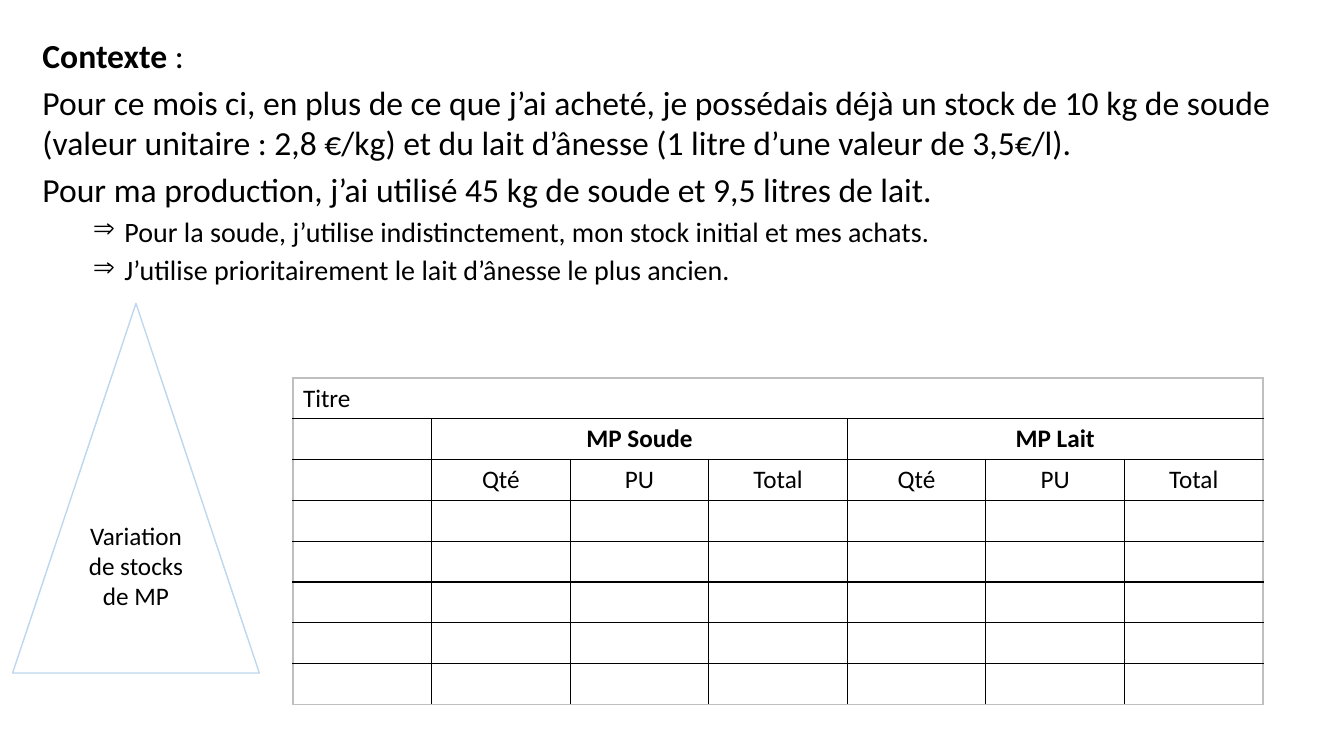
from lxml import etree
from pptx import Presentation
from pptx import util as u
from pptx.dml.color import RGBColor
from pptx.enum import shapes, text
from pptx.oxml.ns import qn

PX = 9525
FONT = "Calibri"
BLACK, WHITE, GREY, SKY = "000000", "FFFFFF", "BFBFBF", "BDD7EE"

CONTEXT = [
    (0, [("Contexte ", True), (":", False)]),
    (0, [("Pour ce mois ci, en plus de ce que j’ai acheté, je possédais déjà un stock "
          "de 10 kg de soude (valeur unitaire : 2,8 €/kg) et du lait d’ânesse "
          "(1 litre d’une valeur de 3,5€/l).", False)]),
    (0, [("Pour ma production, j’ai utilisé 45 kg de soude et 9,5 litres de lait.", False)]),
    (1, [("Pour la soude, j’utilise indistinctement, mon stock initial et mes achats.", False)]),
    (1, [("J’utilise prioritairement le lait d’ânesse le plus ancien.", False)]),
]
MATERIALS = ["MP Soude", "MP Lait"]
MEASURES = ["Qté", "PU", "Total"]
ROWS = 8
COLUMNS = 1 + len(MATERIALS) * len(MEASURES)


def px(length):
    return u.Emu(length * PX)


def color(value):
    return RGBColor.from_string(value)


def add_run(paragraph, words, size, bold=False):
    run = paragraph.add_run()
    run.text = words
    run.font.name = FONT
    run.font.size = u.Pt(size)
    run.font.bold = bold
    run.font.color.rgb = color(BLACK)


def add_arrow_bullet(paragraph):
    properties = paragraph._p.get_or_add_pPr()
    properties.set("marL", str(px(78)))
    properties.set("indent", str(px(-30)))
    etree.SubElement(properties, qn("a:buFont"), typeface="Symbol")
    etree.SubElement(properties, qn("a:buChar"), char="⇒")


def add_context(slide, left, top, width, height):
    frame = slide.shapes.add_textbox(px(left), px(top), px(width), px(height)).text_frame
    frame.word_wrap = True
    for index, (level, runs) in enumerate(CONTEXT):
        paragraph = frame.paragraphs[0] if index == 0 else frame.add_paragraph()
        paragraph.level = level
        if index:
            paragraph.space_before = u.Pt(3.5 if level else 4.5)
        if level:
            add_arrow_bullet(paragraph)
        for words, bold in runs:
            add_run(paragraph, words, 20 if level else 24, bold)


def set_borders(cell, edges):
    properties = cell._tc.get_or_add_tcPr()
    for index, (side, outer) in enumerate(edges):
        line = etree.Element(qn(f"a:{side}"), w=str(u.Pt(1)))
        fill = etree.SubElement(line, qn("a:solidFill"))
        etree.SubElement(fill, qn("a:srgbClr"), val=GREY if outer else BLACK)
        properties.insert(index, line)


def fill_cell(cell, words, bold=False, align=text.PP_ALIGN.CENTER):
    paragraph = cell.text_frame.paragraphs[0]
    paragraph.alignment = align
    add_run(paragraph, words, 18, bold)


def add_stock_table(slide, left, top, width, height):
    stock = slide.shapes.add_table(ROWS, COLUMNS, px(left), px(top), px(width), px(height)).table
    stock.first_row = stock.horz_banding = False

    stock.cell(0, 0).merge(stock.cell(0, COLUMNS - 1))
    fill_cell(stock.cell(0, 0), "Titre", align=text.PP_ALIGN.LEFT)
    for group, material in enumerate(MATERIALS):
        first = 1 + group * len(MEASURES)
        stock.cell(1, first).merge(stock.cell(1, first + len(MEASURES) - 1))
        fill_cell(stock.cell(1, first), material, bold=True)
        for offset, measure in enumerate(MEASURES):
            fill_cell(stock.cell(2, first + offset), measure)

    for row in range(ROWS):
        for column in range(COLUMNS):
            cell = stock.cell(row, column)
            last = column + (cell.span_width if cell.is_merge_origin else 1)
            cell.fill.solid()
            cell.fill.fore_color.rgb = color(WHITE)
            set_borders(cell, [("lnL", column == 0), ("lnR", last == COLUMNS),
                               ("lnT", row == 0), ("lnB", row == ROWS - 1)])


def add_variation(slide, left, top, width, height):
    triangle = slide.shapes.add_shape(
        shapes.MSO_SHAPE.ISOSCELES_TRIANGLE, px(left), px(top), px(width), px(height))
    triangle.shadow.inherit = False
    triangle.fill.solid()
    triangle.fill.fore_color.rgb = color(WHITE)
    triangle.line.color.rgb = color(SKY)
    triangle.line.width = u.Pt(1)
    frame = triangle.text_frame
    frame.word_wrap = True
    frame.vertical_anchor = text.MSO_ANCHOR.MIDDLE
    frame.margin_bottom = px(34)
    paragraph = frame.paragraphs[0]
    paragraph.alignment = text.PP_ALIGN.CENTER
    add_run(paragraph, "Variation de stocks de MP", 18)


def main():
    deck = Presentation()
    deck.slide_width, deck.slide_height = px(1280), px(720)
    slide = deck.slides.add_slide(deck.slide_layouts[6])
    add_context(slide, 31, 29, 1219, 475)
    add_stock_table(slide, 279, 360, 924, 311)
    add_variation(slide, 12, 289, 235, 352)
    deck.save("out.pptx")


if __name__ == "__main__":
    main()
